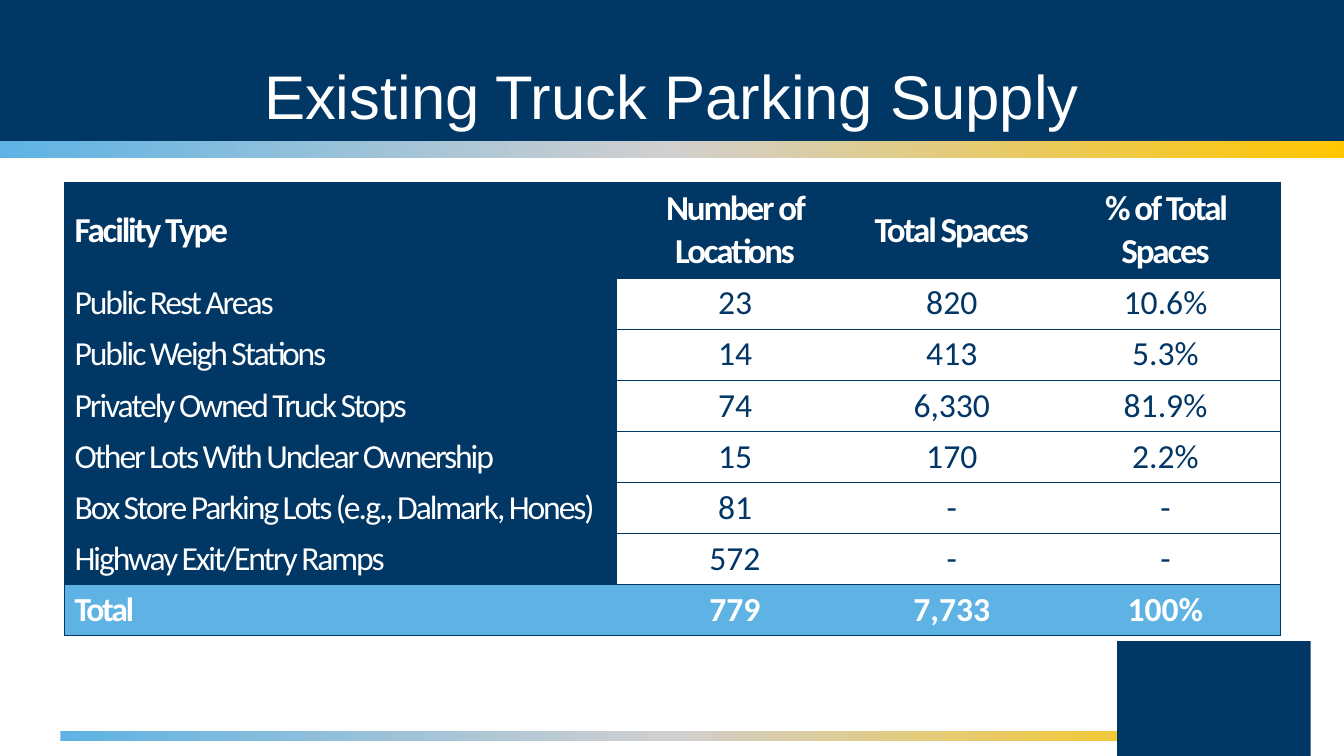
from dataclasses import dataclass

from lxml import etree
from pptx import Presentation
from pptx.dml.color import RGBColor
from pptx.enum import shapes, text
from pptx.oxml import ns
from pptx.util import Inches, Pt


@dataclass(frozen=True)
class Theme:
    navy: str = "003764"
    ink: str = "023666"
    sky: str = "5EB3E4"
    silver: str = "D1CFCF"
    gold: str = "FFC600"
    white: str = "FFFFFF"
    title_font: str = "Arial"
    table_font: str = "Calibri"
    title_size: int = 44
    header_size: int = 25
    body_size: int = 24
    label_spacing: int = -150
    border: float = 0.5


THEME = Theme()
NO_STYLE = "{2D5ABB26-0587-4C30-8999-92F81FD0307C}"
COLUMN_WIDTHS = (5.48, 2.34, 1.96, 2.28)
HEADER_HEIGHT, ROW_HEIGHT = 0.94, 0.5
SUPPLY = (
    ("Facility Type", "Number of Locations", "Total Spaces", "% of Total Spaces"),
    ("Public Rest Areas", "23", "820", "10.6%"),
    ("Public Weigh Stations", "14", "413", "5.3%"),
    ("Privately Owned Truck Stops", "74", "6,330", "81.9%"),
    ("Other Lots With Unclear Ownership", "15", "170", "2.2%"),
    ("Box Store Parking Lots (e.g., Dalmark, Hones)", "81", "-", "-"),
    ("Highway Exit/Entry Ramps", "572", "-", "-"),
    ("Total", "779", "7,733", "100%"),
)


def rgb(color):
    return RGBColor.from_string(color)


def add_color(parent, color):
    etree.SubElement(parent, ns.qn("a:srgbClr"), val=color)


def style_run(r, font, size, color, bold=False):
    r.font.name = font
    r.font.size = Pt(size)
    r.font.bold = bold
    r.font.color.rgb = rgb(color)


def add_block(slide, x, y, w, h):
    sp = slide.shapes.add_shape(
        shapes.MSO_SHAPE.RECTANGLE, Inches(x), Inches(y), Inches(w), Inches(h))
    sp.shadow.inherit = False
    sp.line.fill.background()
    sp.fill.solid()
    sp.fill.fore_color.rgb = rgb(THEME.navy)
    return sp


def add_gradient_bar(slide, x, y, w, h):
    sp = add_block(slide, x, y, w, h)
    sp.fill.gradient()
    sp.fill.gradient_angle = 0
    stops = sp.element.spPr.find(".//" + ns.qn("a:gsLst"))
    stops.clear()
    for i, color in enumerate((THEME.sky, THEME.silver, THEME.gold)):
        stop = etree.SubElement(stops, ns.qn("a:gs"), pos=str(i * 50000))
        add_color(stop, color)


def add_title(slide, title):
    sp = slide.shapes.add_textbox(Inches(0), Inches(0.39), Inches(13.33), Inches(1.19))
    tf = sp.text_frame
    tf.word_wrap = True
    tf.vertical_anchor = text.MSO_ANCHOR.MIDDLE
    tf.text = title
    p = tf.paragraphs[0]
    p.alignment = text.PP_ALIGN.CENTER
    p.line_spacing = 0.9
    style_run(p.runs[0], THEME.title_font, THEME.title_size, THEME.white)


def set_borders(cell, sides):
    tc_pr = cell._tc.get_or_add_tcPr()
    for i, side in enumerate(sides):
        ln = etree.Element(ns.qn("a:ln" + side), w=str(Pt(THEME.border)))
        add_color(etree.SubElement(ln, ns.qn("a:solidFill")), THEME.navy)
        tc_pr.insert(i, ln)


def fill_cell(cell, value, row, col):
    header, total, label = row == 0, row == len(SUPPLY) - 1, col == 0
    if total:
        fill = THEME.sky
    else:
        fill = THEME.navy if header or label else THEME.white
    cell.fill.solid()
    cell.fill.fore_color.rgb = rgb(fill)
    cell.vertical_anchor = text.MSO_ANCHOR.MIDDLE
    cell.text_frame.text = value
    p = cell.text_frame.paragraphs[0]
    p.alignment = text.PP_ALIGN.LEFT if label else text.PP_ALIGN.CENTER
    r = p.runs[0]
    style_run(r, THEME.table_font,
              THEME.header_size if header else THEME.body_size,
              THEME.ink if fill == THEME.white else THEME.white,
              header or total)
    if header or label:
        r.font._element.set("spc", str(THEME.label_spacing))
    left = ["L"] if label else []
    right = ["R"] if col == len(COLUMN_WIDTHS) - 1 else []
    set_borders(cell, left + right + ["T", "B"])


def add_supply_table(slide):
    height = HEADER_HEIGHT + ROW_HEIGHT * (len(SUPPLY) - 1)
    frame = slide.shapes.add_table(
        len(SUPPLY), len(COLUMN_WIDTHS), Inches(0.64), Inches(1.81),
        Inches(sum(COLUMN_WIDTHS)), Inches(height))
    table = frame.table
    table.horz_banding = False
    table._tbl.tblPr.find(ns.qn("a:tableStyleId")).text = NO_STYLE
    for column, width in zip(table.columns, COLUMN_WIDTHS):
        column.width = Inches(width)
    for i, values in enumerate(SUPPLY):
        table.rows[i].height = Inches(ROW_HEIGHT if i else HEADER_HEIGHT)
        for j, value in enumerate(values):
            fill_cell(table.cell(i, j), value, i, j)


def main():
    prs = Presentation()
    prs.slide_width, prs.slide_height = Inches(13.33), Inches(7.5)
    slide = prs.slides.add_slide(prs.slide_layouts[6])
    add_block(slide, 0, 0, 13.33, 1.4)
    add_gradient_bar(slide, 0, 1.4, 13.33, 0.17)
    add_gradient_bar(slide, 0.6, 7.25, 12.14, 0.1)
    add_block(slide, 11.08, 6.36, 1.92, 1.14)
    add_supply_table(slide)
    add_title(slide, "Existing Truck Parking Supply")
    prs.save("out.pptx")


if __name__ == "__main__":
    main()
